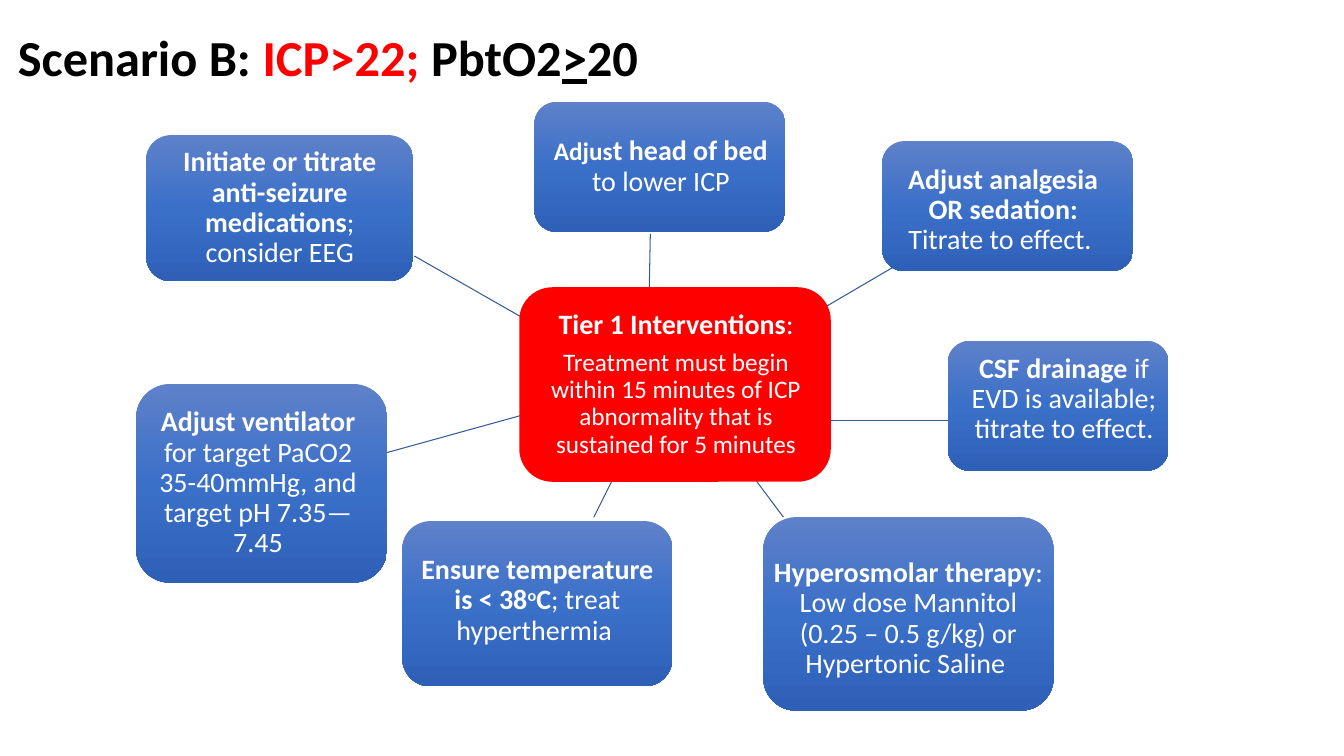
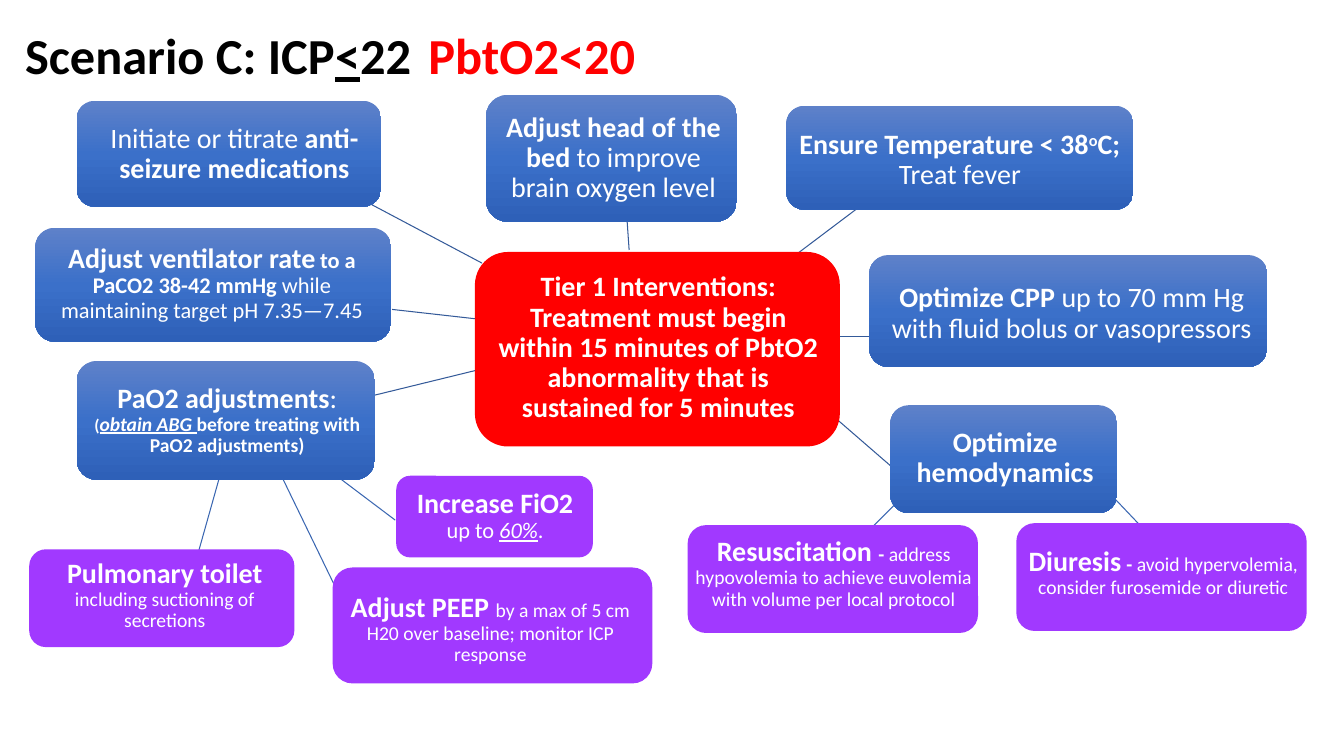
import copy

import lxml.etree
import pptx
import pptx.dml.color
import pptx.enum.shapes
import pptx.enum.text
import pptx.oxml.ns
import pptx.util
from dataclasses import dataclass

PX = 9144  # 100 px to the inch
WIDE, HIGH = 1333, 750


@dataclass(frozen=True)
class Theme:
    font: str = "Calibri"
    title: int = 36
    body: int = 20
    mid: int = 18
    note: int = 16
    small: int = 14
    tiny: int = 12
    lead: float = 0.9
    gap: float = 6.3
    rule: float = 0.75
    black: str = "000000"
    white: str = "FFFFFF"
    red: str = "FF0000"
    link: str = "345A99"
    twig: str = "3A66B1"
    violet: str = "A139FF"
    blue: tuple = ("5E81C9", "3B70C9", "2E60B8")
    round: float = 0.17


T = Theme()

# A run is (text, marks, size): b bold, i italic, u underline, ^ raised, r red.
# A box is (place, room, fill, paragraphs); room is left, right, shift down.
# A link is (x1, y1, x2, y2).
SLIDES = [
    {
        "title": ((8, 19, 1150, 82), "MIDDLE", [
            ("Scenario B: ", "b"), ("ICP>22; ", "br"), ("PbtO2", "b"),
            (">", "bu"), ("20", "b")]),
        "links": [
            (785, 417, 941, 417), (799, 316, 886, 265), (539, 327, 411, 254),
            (539, 406, 355, 457), (644, 286, 645, 232), (750, 477, 777, 513),
            (607, 477, 589, 513)],
        "twigs": [],
        "boxes": [
            ((515, 285, 309, 193), (17, 15, 0), T.red, [
                [("Tier 1 Interventions", "b"), (":", "")],
                [("Treatment must begin within 15 minutes of ICP abnormality "
                  "that is sustained for 5 minutes", "", T.mid)]]),
            ((530, 101, 249, 129), (14, 12, 0), T.blue, [
                [("Adjus", "b", T.mid), ("t head of bed ", "b"),
                 ("to lower ICP", "")]]),
            ((875, 140, 249, 129), (12, 21, 4), T.blue, [
                [("Adjust analgesia OR sedation: ", "b"),
                 ("Titrate to effect. ", "")]]),
            ((940, 338, 219, 129), (18, 5, -6), T.blue, [
                [("CSF drainage ", "b"),
                 ("if EVD is available; titrate to effect.", "")]]),
            ((757, 513, 288, 192), (5, 5, 5), T.blue, [
                [("Hyperosmolar therapy", "b"),
                 (": Low dose Mannitol (0.25 – 0.5 g/kg) or "
                  "Hypertonic Saline ", "")]]),
            ((399, 517, 268, 164), (13, 13, -3), T.blue, [
                [("Ensure temperature is < 38", "b"), ("o", "b^"), ("C", "b"),
                 ("; treat hyperthermia ", "")]]),
            ((135, 381, 249, 197), (15, 22, 0), T.blue, [
                [("Adjust ventilator ", "b"),
                 ("for target PaCO2 35-40mmHg, and target pH 7.35—7.45", "")]]),
            ((145, 134, 265, 145), (13, 13, 0), T.blue, [
                [("Initiate or titrate anti-seizure medications", "b"),
                 ("; consider EEG", "")]]),
        ],
    },
    {
        "title": ((15, 5, 989, 85), "BOTTOM", [
            ("Scenario C: ICP", "b"), ("<", "bu"), ("22\t", "b"),
            ("PbtO2<20", "br")]),
        "links": [
            (478, 261, 363, 200), (478, 317, 389, 307), (478, 366, 339, 400),
            (792, 383, 897, 474), (827, 334, 862, 334), (789, 253, 854, 204),
            (624, 248, 622, 219)],
        "twigs": [
            (1104, 493, 1142, 533), (891, 497, 861, 527), (335, 473, 392, 516),
            (281, 476, 346, 610), (217, 476, 195, 554)],
        "boxes": [
            ((471, 250, 362, 193), (21, 19, -1), T.red, [
                [("Tier 1 Interventions: Treatment must begin within "
                  "15 minutes of PbtO2 abnormality that is sustained for "
                  "5 minutes", "b")]]),
            ((482, 94, 249, 126), (15, 11, 0), T.blue, [
                [("Adjust head of the bed", "b"),
                 (" to improve brain oxygen level", "")]]),
            ((780, 105, 344, 103), (5, 5, 3), T.blue, [
                [("Ensure Temperature < 38", "b"), ("o", "b^"), ("C; ", "b"),
                 ("Treat fever", "")]]),
            ((862, 253, 395, 111), (18, 11, 3), T.blue, [
                [("Optimize CPP ", "b"),
                 ("up to 70 mm Hg with fluid bolus or vasopressors", "")]]),
            ((883, 402, 225, 107), (17, 14, -1), T.blue, [
                [("Optimize hemodynamics", "b")]]),
            ((682, 521, 288, 107), (7, 1, -5), T.violet, [
                [("Resuscitation ", "b"), ("- ", "b", T.small),
                 ("address hypovolemia to achieve euvolemia with volume "
                  "per local protocol", "", T.small)]]),
            ((1008, 519, 288, 107), (9, 0, -4), T.violet, [
                [("Diuresis", "b"), (" ", "b", T.note), ("- ", "b", T.small),
                 ("avoid hypervolemia, consider furosemide or diuretic",
                  "", T.small)]]),
            ((76, 358, 296, 118), (13, 10, 0), T.blue, [
                [("PaO2 adjustments", "b"), (": ", ""), ("(", "b", T.tiny),
                 ("obtain ABG ", "biu", T.small),
                 ("before treating with PaO2 adjustments)", "b", T.small)]]),
            ((393, 472, 195, 81), (11, 10, 0), T.violet, [
                [("Increase FiO2 ", "b"), ("up to ", "", T.note),
                 ("60%", "iu", T.note), (".", "", T.note)]]),
            ((330, 563, 317, 115), (8, 12, 4), T.violet, [
                [("Adjust PEEP ", "b"),
                 ("by a max of 5 cm H20 over baseline; monitor ICP response",
                  "", T.small)]]),
            ((29, 545, 263, 97), (11, 5, -3), T.violet, [
                [("Pulmonary toilet ", "b"),
                 ("including suctioning of secretions", "", T.small)]]),
            ((35, 226, 353, 113), (4, 8, -1), T.blue, [
                [("Adjust ventilator rate", "b"), (" ", "b", T.small),
                 ("to a PaCO2 38-42 mmHg ", "b", T.note),
                 ("while maintaining target pH 7.35—7.45", "", T.note)]]),
            ((76, 100, 302, 105), (20, 9, 1), T.blue, [
                [("Initiate or titrate ", ""),
                 ("anti-seizure medications", "b")]]),
        ],
    },
]


def emu(*sizes):
    return [round(size * PX) for size in sizes]


def rgb(code):
    return pptx.dml.color.RGBColor.from_string(code)


def write(frame, paras, size, color, align="LEFT", anchor="MIDDLE",
          pad=(10, 5, 10, 5)):
    """Fill a text frame with paragraphs of marked runs."""
    frame.word_wrap = True
    frame.vertical_anchor = pptx.enum.text.MSO_ANCHOR[anchor]
    (frame.margin_left, frame.margin_top,
     frame.margin_right, frame.margin_bottom) = emu(*pad)
    for n, runs in enumerate(paras):
        para = frame.add_paragraph() if n else frame.paragraphs[0]
        para.alignment = pptx.enum.text.PP_ALIGN[align]
        para.line_spacing = T.lead
        if n:
            para.space_before = pptx.util.Pt(T.gap)
        for text, marks, *own in runs:
            run = para.add_run()
            run.text = text
            font = run.font
            font.name = T.font
            font.size = pptx.util.Pt(own[0] if own else size)
            font.bold = "b" in marks
            font.italic = "i" in marks
            font.underline = "u" in marks
            font.color.rgb = rgb(T.red if "r" in marks else color)
            if "^" in marks:
                font._element.set("baseline", "30000")


def shade(shape, colors):
    """Give a shape an even gradient from top to bottom."""
    shape.fill.gradient()
    shape.fill.gradient_angle = 270
    stops = shape._element.spPr.find(".//" + pptx.oxml.ns.qn("a:gsLst"))
    while len(stops) < len(colors):
        stops.append(copy.deepcopy(stops[0]))
    for n, (stop, color) in enumerate(zip(shape.fill.gradient_stops, colors)):
        stop.position = n / (len(colors) - 1)
        stop.color.rgb = rgb(color)


def box(slide, place, room, fill, paras):
    kind = pptx.enum.shapes.MSO_SHAPE.ROUNDED_RECTANGLE
    shape = slide.shapes.add_shape(kind, *emu(*place))
    shape.adjustments[0] = T.round
    shape.shadow.inherit = False
    shape.line.fill.background()
    if isinstance(fill, tuple):
        shade(shape, fill)
    else:
        shape.fill.solid()
        shape.fill.fore_color.rgb = rgb(fill)
    left, right, down = room
    # A rounded corner already insets the text by 0.29 of its radius.
    inset = 0.29 * T.round * min(place[2:])
    pad = (max(left - inset, 0), max(2 * down, 0),
           max(right - inset, 0), max(-2 * down, 0))
    write(shape.text_frame, paras, T.body, T.white, align="CENTER", pad=pad)


def link(slide, ends, color):
    kind = pptx.enum.shapes.MSO_CONNECTOR.STRAIGHT
    line = slide.shapes.add_connector(kind, *emu(*ends))
    line.line.color.rgb = rgb(color)
    line.line.width = pptx.util.Pt(T.rule)
    lxml.etree.SubElement(line._element.spPr,
                          pptx.oxml.ns.qn("a:effectLst"))


def build(deck, data):
    slide = deck.slides.add_slide(deck.slide_layouts[6])
    place, anchor, runs = data["title"]
    head = slide.shapes.add_textbox(*emu(*place))
    write(head.text_frame, [runs], T.title, T.black, anchor=anchor)
    for key, color in (("links", T.link), ("twigs", T.twig)):
        for ends in data[key]:
            link(slide, ends, color)
    for item in data["boxes"]:
        box(slide, *item)


def main():
    deck = pptx.Presentation()
    deck.slide_width, deck.slide_height = emu(WIDE, HIGH)
    for data in SLIDES:
        build(deck, data)
    deck.save("out.pptx")


if __name__ == "__main__":
    main()
